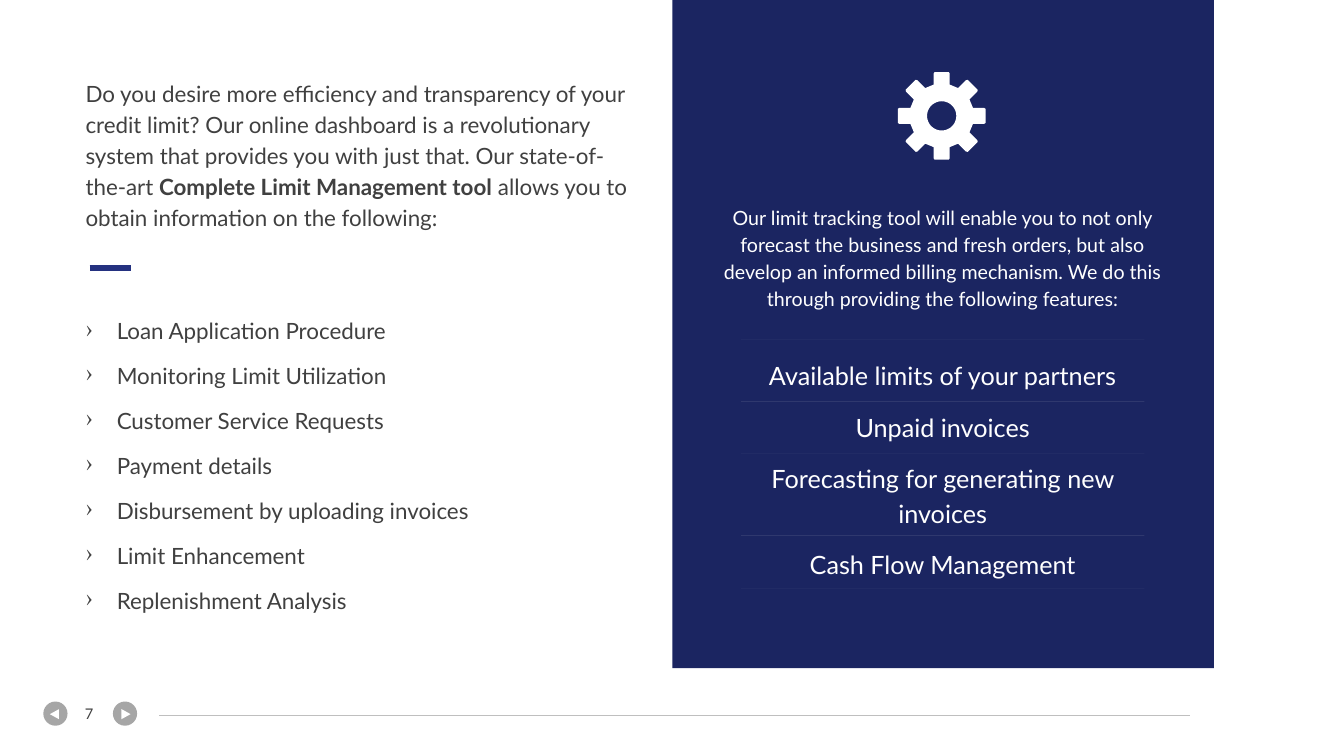
from math import cos, sin, pi
from lxml.etree import SubElement
from pptx import Presentation
from pptx.dml.color import RGBColor
from pptx.enum.shapes import MSO_CONNECTOR, MSO_SHAPE
from pptx.enum.text import MSO_AUTO_SIZE, PP_ALIGN
from pptx.oxml.ns import qn
from pptx.util import Inches, Pt

COLORS = {
    "text": "404040",
    "panel": "1B2561",
    "accent": "243180",
    "white": "FFFFFF",
    "button": "A6A6A6",
    "rule": "BFBFBF",
}


class SlideBuilder:
    """Hold the slide and its style, and add each kind of element."""

    font = "Lato"
    line_spacing = 1.15

    def __init__(self, slide):
        self.slide = slide

    def color(self, name):
        return RGBColor.from_string(COLORS[name])

    def paint(self, shape, fill):
        shape.shadow.inherit = False
        shape.fill.solid()
        shape.fill.fore_color.rgb = self.color(fill)
        shape.line.fill.background()

    def shape(self, kind, left, top, width, height, fill, rotation=0):
        shape = self.slide.shapes.add_shape(
            kind, Inches(left), Inches(top), Inches(width), Inches(height))
        self.paint(shape, fill)
        shape.rotation = rotation

    def line(self, left, right, y, color, width, opacity=100):
        line = self.slide.shapes.add_connector(
            MSO_CONNECTOR.STRAIGHT, Inches(left), Inches(y), Inches(right), Inches(y))
        line.line.color.rgb = self.color(color)
        line.line.width = Pt(width)
        properties = line._element.spPr
        if opacity < 100:
            rgb = properties.find(".//" + qn("a:srgbClr"))
            SubElement(rgb, qn("a:alpha"), val=str(opacity * 1000))
        SubElement(properties, qn("a:effectLst"))

    def text(self, left, top, width, height, paragraphs, size, color="text",
             align=PP_ALIGN.LEFT, before=0, after=0, last_after=None,
             spacing=line_spacing, bullet=None):
        box = self.slide.shapes.add_textbox(
            Inches(left), Inches(top), Inches(width), Inches(height))
        frame = box.text_frame
        frame.word_wrap = True
        frame.auto_size = MSO_AUTO_SIZE.SHAPE_TO_FIT_TEXT
        for index, runs in enumerate(paragraphs):
            paragraph = frame.paragraphs[0] if index == 0 else frame.add_paragraph()
            if bullet:
                properties = paragraph._p.get_or_add_pPr()
                properties.set("marL", str(Inches(0.31)))
                properties.set("indent", str(-Inches(0.31)))
                SubElement(properties, qn("a:buChar"), char=bullet)
            paragraph.alignment = align
            paragraph.line_spacing = spacing
            paragraph.space_before = Pt(before if index else 0)
            is_last = index == len(paragraphs) - 1
            paragraph.space_after = Pt(last_after if is_last and last_after else after)
            for words, bold in runs:
                run = paragraph.add_run()
                run.text = words
                run.font.name = self.font
                run.font.size = Pt(size)
                run.font.bold = bold
                run.font.color.rgb = self.color(color)

    def gear(self, x, y, fill, teeth=8):
        tooth = [(0.31, -0.08), (0.42, -0.08), (0.435, -0.07),
                 (0.435, 0.07), (0.42, 0.08), (0.31, 0.08)]
        outline = []
        for number in range(teeth):
            angle = 2 * pi * number / teeth
            outline += [(Inches(x + out * cos(angle) - side * sin(angle)),
                         Inches(y + out * sin(angle) + side * cos(angle)))
                        for out, side in tooth]
        steps = 48
        hole = [(Inches(x + 0.145 * cos(2 * pi * step / steps)),
                 Inches(y - 0.145 * sin(2 * pi * step / steps)))
                for step in range(steps)]
        builder = self.slide.shapes.build_freeform(*outline[0])
        builder.add_line_segments(outline[1:], close=True)
        builder.move_to(*hole[0])
        builder.add_line_segments(hole[1:], close=True)
        self.paint(builder.convert_to_shape(), fill)

    def nav_button(self, left, arrow_left, rotation):
        self.shape(MSO_SHAPE.OVAL, left, 6.96, 0.24, 0.24, "button")
        self.shape(MSO_SHAPE.ISOSCELES_TRIANGLE, arrow_left, 7.04, 0.1, 0.09,
                   "white", rotation)


def main():
    presentation = Presentation()
    presentation.slide_width = Inches(13.33)
    presentation.slide_height = Inches(7.5)
    page = SlideBuilder(presentation.slides.add_slide(presentation.slide_layouts[6]))

    page.line(1.58, 11.8, 7.1, "rule", 0.5)
    page.nav_button(1.12, 1.2, 90)
    page.nav_button(0.43, 0.49, 270)

    introduction = [
        ("Do you desire more efficiency and transparency of your credit limit? "
         "Our online dashboard is a revolutionary system that provides you with "
         "just that. Our state-of-the-art ", False),
        ("Complete Limit Management tool", True),
        (" allows you to obtain information on the following:", False),
    ]
    page.text(0.75, 0.71, 5.71, 1.65, [introduction], 16, after=10)

    topics = [
        "Loan Application Procedure",
        "Monitoring Limit Utilization",
        "Customer Service Requests",
        "Payment details",
        "Disbursement by uploading invoices",
        "Limit Enhancement",
        "Replenishment Analysis",
    ]
    page.text(0.75, 3.06, 5.01, 3.19, [[(topic, False)] for topic in topics], 16,
              after=10, bullet="›")
    page.line(0.89, 1.3, 2.66, "accent", 4.75)

    page.shape(MSO_SHAPE.RECTANGLE, 6.67, 0, 5.37, 6.63, "panel")
    features = [
        "Available limits of your partners",
        "Unpaid invoices",
        "Forecasting for generating new invoices",
        "Cash Flow Management",
    ]
    page.text(7.35, 3.48, 4, 2.35, [[(feature, False)] for feature in features], 18,
              "white", PP_ALIGN.CENTER, before=12, last_after=10)
    summary = ("Our limit tracking tool will enable you to not only forecast the "
               "business and fresh orders, but also develop an informed billing "
               "mechanism. We do this through providing the following features:")
    page.text(7.02, 1.96, 4.66, 1.16, [[(summary, False)]], 14,
              "white", PP_ALIGN.CENTER, after=10)
    for divider_y in (3.37, 3.98, 4.5, 5.31, 5.84):
        page.line(7.35, 11.35, divider_y, "white", 0.1, opacity=25)
    page.gear(9.34, 1.15, "white")

    page.text(0.66, 6.94, 0.45, 0.29, [[("7", False)]], 10.5,
              align=PP_ALIGN.CENTER, spacing=1.0)
    presentation.save("out.pptx")


if __name__ == "__main__":
    main()
